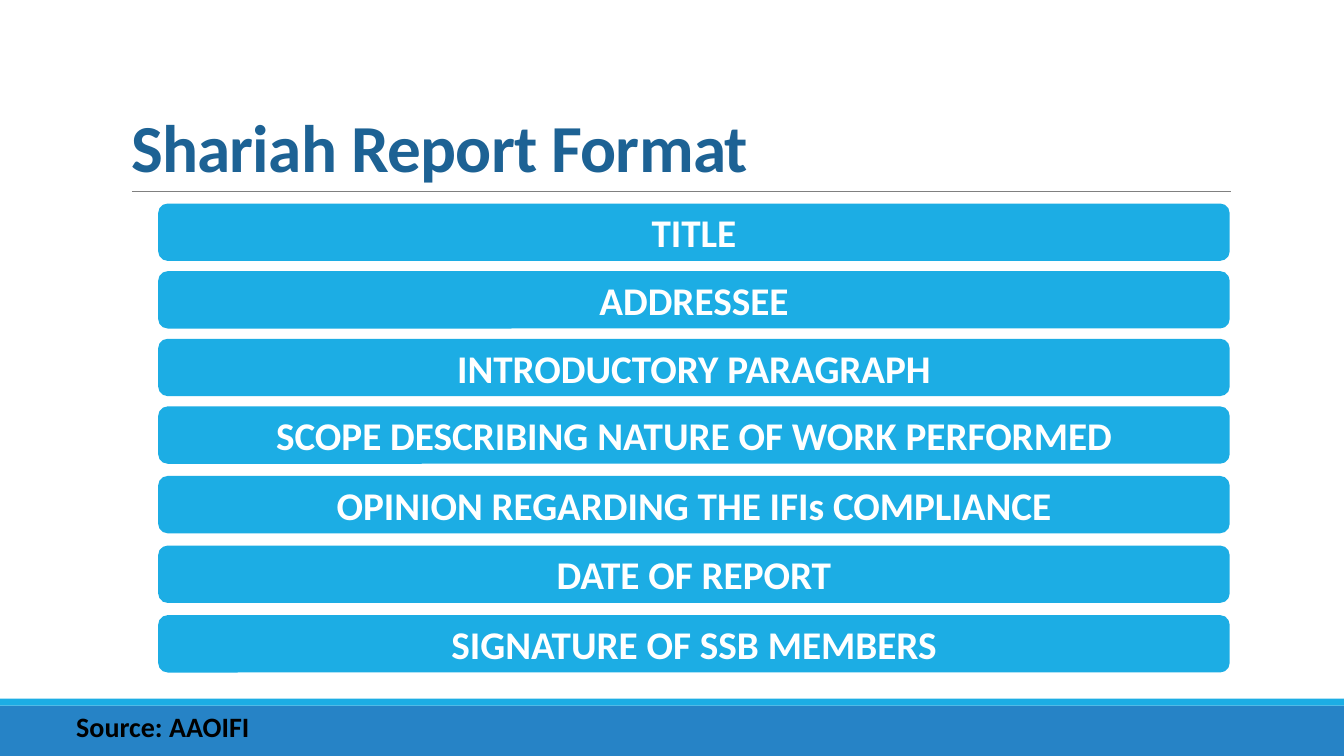
import pptx
import pptx.dml.color
import pptx.enum.shapes
import pptx.enum.text
import pptx.util
from pptx.oxml.ns import qn

Pt = pptx.util.Pt
SHAPE = pptx.enum.shapes.MSO_SHAPE
ANCHOR = pptx.enum.text.MSO_ANCHOR
ALIGN = pptx.enum.text.PP_ALIGN
AUTO_SIZE = pptx.enum.text.MSO_AUTO_SIZE

SECTIONS = [
    "TITLE",
    "ADDRESSEE",
    "INTRODUCTORY PARAGRAPH",
    "SCOPE DESCRIBING NATURE OF WORK PERFORMED",
    "OPINION REGARDING THE IFIs COMPLIANCE",
    "DATE OF REPORT",
    "SIGNATURE OF SSB MEMBERS",
]


def rgb(code):
    return pptx.dml.color.RGBColor.from_string(code)


def set_all(target, values):
    for name, value in values.items():
        setattr(target, name, value)


class ReportSlide:
    font = "Calibri"
    sky, blue, navy = "1CADE4", "2683C6", "1D6294"
    white, black, grey = "FFFFFF", "000000", "808080"

    def __init__(self, deck):
        self.slide = deck.slides.add_slide(deck.slide_layouts[5])
        self.shapes = self.slide.shapes

    def add_text(self, holder, text, size, color, frame_format, paragraph_format):
        """Put one bold line of text in the holder and return its run."""
        frame = holder.text_frame
        set_all(frame, {"word_wrap": True, **frame_format})
        paragraph = frame.paragraphs[0]
        set_all(paragraph, paragraph_format)
        run = paragraph.add_run()
        run.text = text
        set_all(run.font, {"name": self.font, "size": Pt(size), "bold": True})
        run.font.color.rgb = rgb(color)
        return run

    def title(self, text, left, top, width, height):
        heading = self.shapes.title
        set_all(heading, {"left": Pt(left), "top": Pt(top),
                          "width": Pt(width), "height": Pt(height)})
        run = self.add_text(
            heading, text, 48, self.navy,
            {"vertical_anchor": ANCHOR.BOTTOM, "auto_size": AUTO_SIZE.NONE},
            {"alignment": ALIGN.LEFT, "line_spacing": 0.85})
        run.font._element.set("spc", "-50")

    def block(self, kind, color, left, top, width, height):
        block = self.shapes.add_shape(kind, Pt(left), Pt(top), Pt(width), Pt(height))
        block.shadow.inherit = False
        block.fill.solid()
        block.fill.fore_color.rgb = rgb(color)
        block.line.fill.background()
        return block

    def section(self, text, top, height):
        bar = self.block(SHAPE.ROUNDED_RECTANGLE, self.sky, 113, top, 765.4, height)
        self.add_text(bar, text, 28, self.white,
                      {"vertical_anchor": ANCHOR.MIDDLE}, {"alignment": ALIGN.CENTER})

    def rule(self, left, right, y):
        rule = self.shapes.add_connector(
            pptx.enum.shapes.MSO_CONNECTOR.STRAIGHT, Pt(left), Pt(y), Pt(right), Pt(y))
        rule.line.color.rgb = rgb(self.grey)
        rule.line.width = Pt(0.5)
        properties = rule._element.spPr
        properties.append(properties.makeelement(qn("a:effectLst"), {}))

    def source(self, text, left, top, width, height):
        note = self.shapes.add_textbox(Pt(left), Pt(top), Pt(width), Pt(height))
        self.add_text(note, text, 20, self.black,
                      {"auto_size": AUTO_SIZE.SHAPE_TO_FIT_TEXT}, {"alignment": ALIGN.LEFT})


def main():
    deck = pptx.Presentation()
    set_all(deck, {"slide_width": Pt(960), "slide_height": Pt(540)})
    report = ReportSlide(deck)

    report.block(SHAPE.RECTANGLE, report.blue, 0, 504, 960, 36)
    report.block(SHAPE.RECTANGLE, report.sky, 0, 499, 960, 5)
    report.rule(94.3, 879, 136.6)
    report.title("Shariah Report Format", 86.4, 22.6, 792, 114)

    # The last three gaps are slightly wider than the first three.
    top = 145.4
    for index, text in enumerate(SECTIONS):
        report.section(text, top, 41)
        top += 48.3 if index < 3 else 49.7

    report.source("Source: AAOIFI", 47.4, 502.9, 163, 31.5)
    deck.save("out.pptx")


if __name__ == "__main__":
    main()
